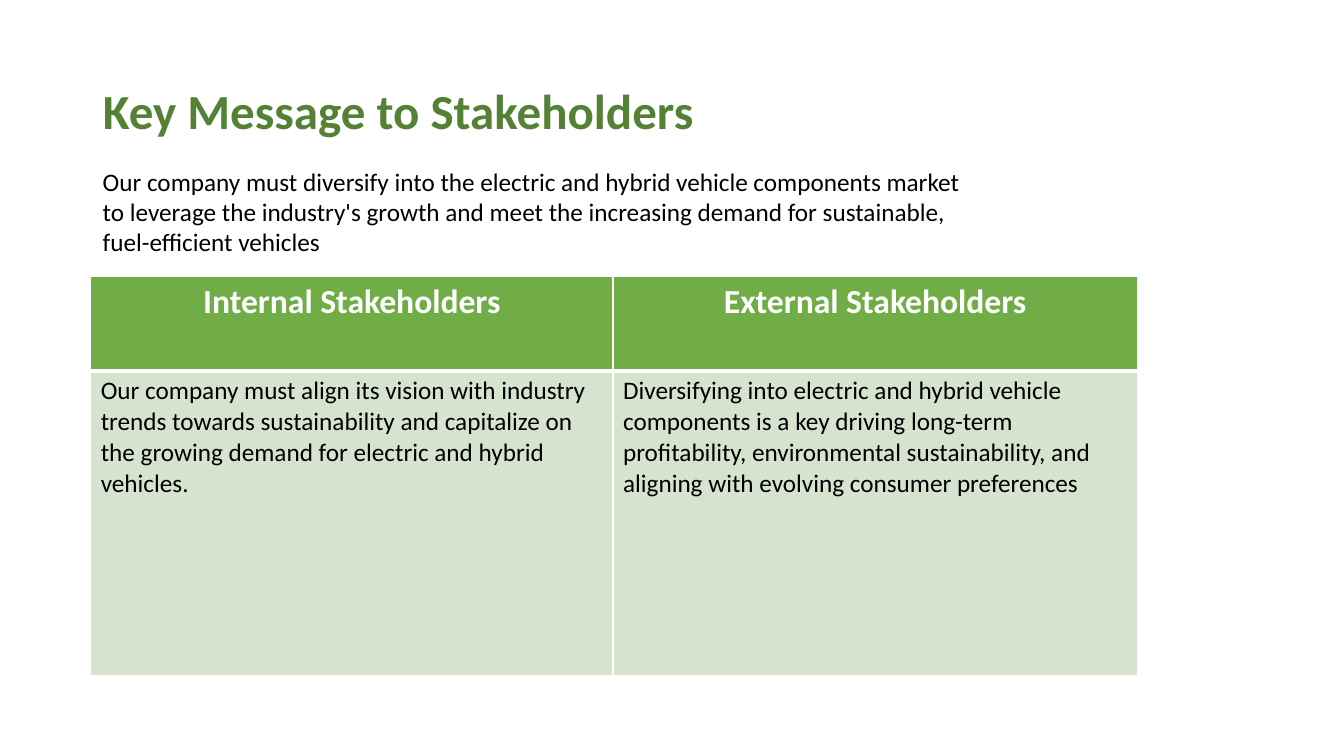
from lxml import etree
from pptx import Presentation
from pptx.dml.color import RGBColor
from pptx.enum.text import MSO_ANCHOR, MSO_AUTO_SIZE, PP_ALIGN
from pptx.oxml.ns import qn
from pptx.util import Pt

LEFT, CENTER = PP_ALIGN.LEFT, PP_ALIGN.CENTER
TOP, MIDDLE = MSO_ANCHOR.TOP, MSO_ANCHOR.MIDDLE
NO_AUTOFIT = MSO_AUTO_SIZE.NONE

# Content
TITLE = "Key Message to Stakeholders"
INTRO = (
    "Our company must diversify into the electric and hybrid vehicle components "
    "market to leverage the industry's growth and meet the increasing demand for "
    "sustainable, fuel-efficient vehicles"
)
MESSAGES = [
    ("Internal Stakeholders", "External Stakeholders"),
    (
        "Our company must align its vision with industry trends towards "
        "sustainability and capitalize on the growing demand for electric and "
        "hybrid vehicles.",
        "Diversifying into electric and hybrid vehicle components is a key driving "
        "long-term profitability, environmental sustainability, and aligning with "
        "evolving consumer preferences",
    ),
]

# Look: lengths in px, 100 px to the inch
EMU_PER_PX = 9144
FONT = "Calibri"
COLORS = {
    "title": "548235",
    "header": "70AD47",
    "body": "D5E3CF",
    "white": "FFFFFF",
    "black": "000000",
}
SLIDE_SIZE = (1333, 750)
TITLE_AREA = (92, 40, 1150, 145)
INTRO_AREA = (92, 160, 871, 101)
TABLE_ORIGIN = (90, 274)
COLUMN_WIDTHS = (518, 520)
ROW_HEIGHTS = (94, 302)
ROW_STYLES = [
    {"fill": "header", "color": "white", "size": 24, "bold": True, "align": CENTER},
    {"fill": "body", "color": "black", "size": 18, "bold": False, "align": LEFT},
]
THIN, THICK = 1, 3


def px(*lengths):
    return [length * EMU_PER_PX for length in lengths]


def write(frame, text, size, color, bold=False, align=LEFT):
    para = frame.paragraphs[0]
    para.alignment = align
    span = para.add_run()
    span.text = text
    span.font.name = FONT
    span.font.size = Pt(size)
    span.font.bold = bold
    span.font.color.rgb = RGBColor.from_string(COLORS[color])
    return para


def set_borders(cell, widths):
    """Draw white borders; they must come before the fill in the cell XML."""
    properties = cell._tc.get_or_add_tcPr()
    for index, (side, width) in enumerate(widths.items()):
        line = etree.Element(qn(f"a:ln{side}"), w=str(Pt(width)))
        fill = etree.SubElement(line, qn("a:solidFill"))
        etree.SubElement(fill, qn("a:srgbClr"), val=COLORS["white"])
        properties.insert(index, line)


def add_title(page):
    title = page.shapes.title
    title.left, title.top, title.width, title.height = px(*TITLE_AREA)
    frame = title.text_frame
    frame.auto_size = NO_AUTOFIT
    frame.vertical_anchor = MIDDLE
    para = write(frame, TITLE, 35, "title", bold=True)
    para.line_spacing = 0.9


def add_intro(page):
    box = page.shapes.add_textbox(*px(*INTRO_AREA))
    box.text_frame.word_wrap = True
    write(box.text_frame, INTRO, 18, "black")


def add_messages(page):
    area = px(*TABLE_ORIGIN, sum(COLUMN_WIDTHS), sum(ROW_HEIGHTS))
    table = page.shapes.add_table(len(MESSAGES), len(COLUMN_WIDTHS), *area).table
    for column, width in zip(table.columns, px(*COLUMN_WIDTHS)):
        column.width = width
    for row, height in zip(table.rows, px(*ROW_HEIGHTS)):
        row.height = height

    for row_index, (texts, style) in enumerate(zip(MESSAGES, ROW_STYLES)):
        is_header = row_index == 0
        # The header's bottom edge and the body's top edge are one thick line
        borders = {
            "L": THIN,
            "R": THIN,
            "T": THIN if is_header else THICK,
            "B": THICK if is_header else THIN,
        }
        for column_index, text in enumerate(texts):
            cell = table.cell(row_index, column_index)
            cell.vertical_anchor = TOP
            cell.fill.solid()
            cell.fill.fore_color.rgb = RGBColor.from_string(COLORS[style["fill"]])
            set_borders(cell, borders)
            write(cell.text_frame, text, style["size"], style["color"],
                  style["bold"], style["align"])


def main():
    deck = Presentation()
    deck.slide_width, deck.slide_height = px(*SLIDE_SIZE)
    title_only = deck.slide_layouts[5]
    page = deck.slides.add_slide(title_only)
    add_title(page)
    add_messages(page)
    add_intro(page)
    deck.save("out.pptx")


if __name__ == "__main__":
    main()
